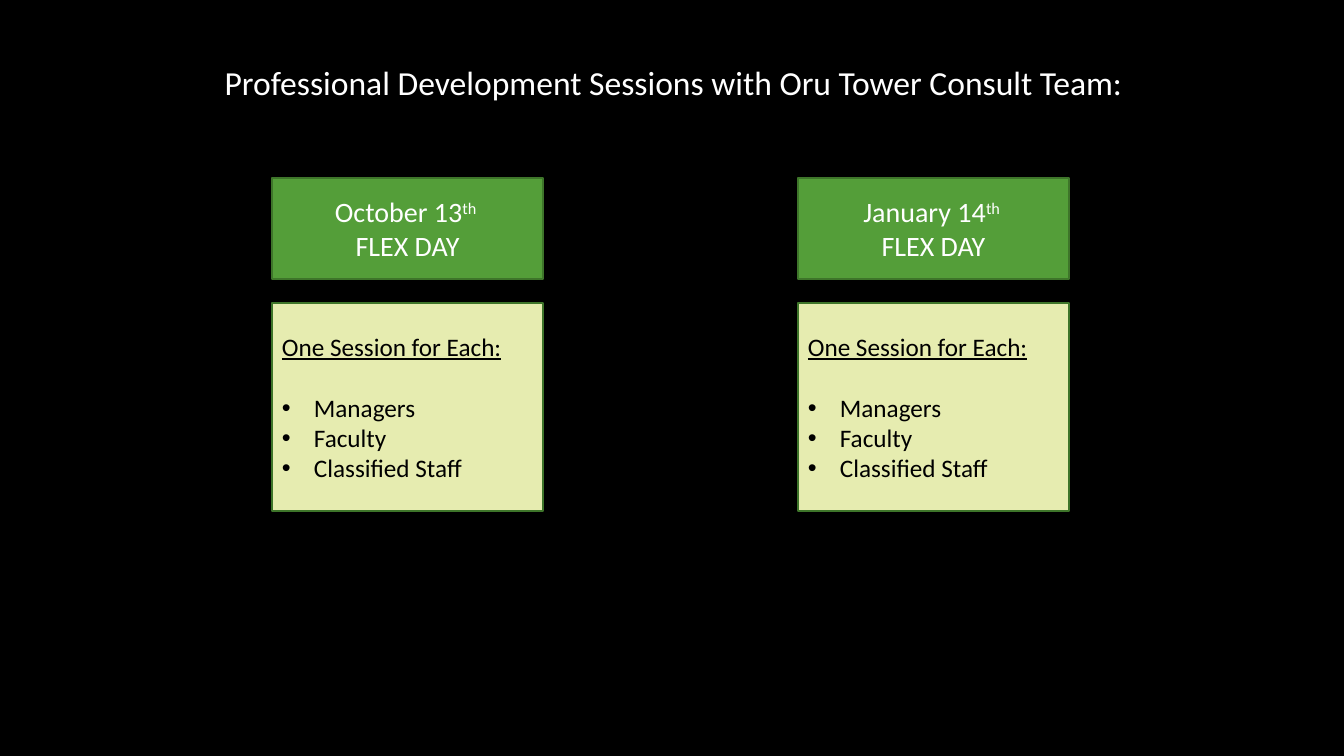
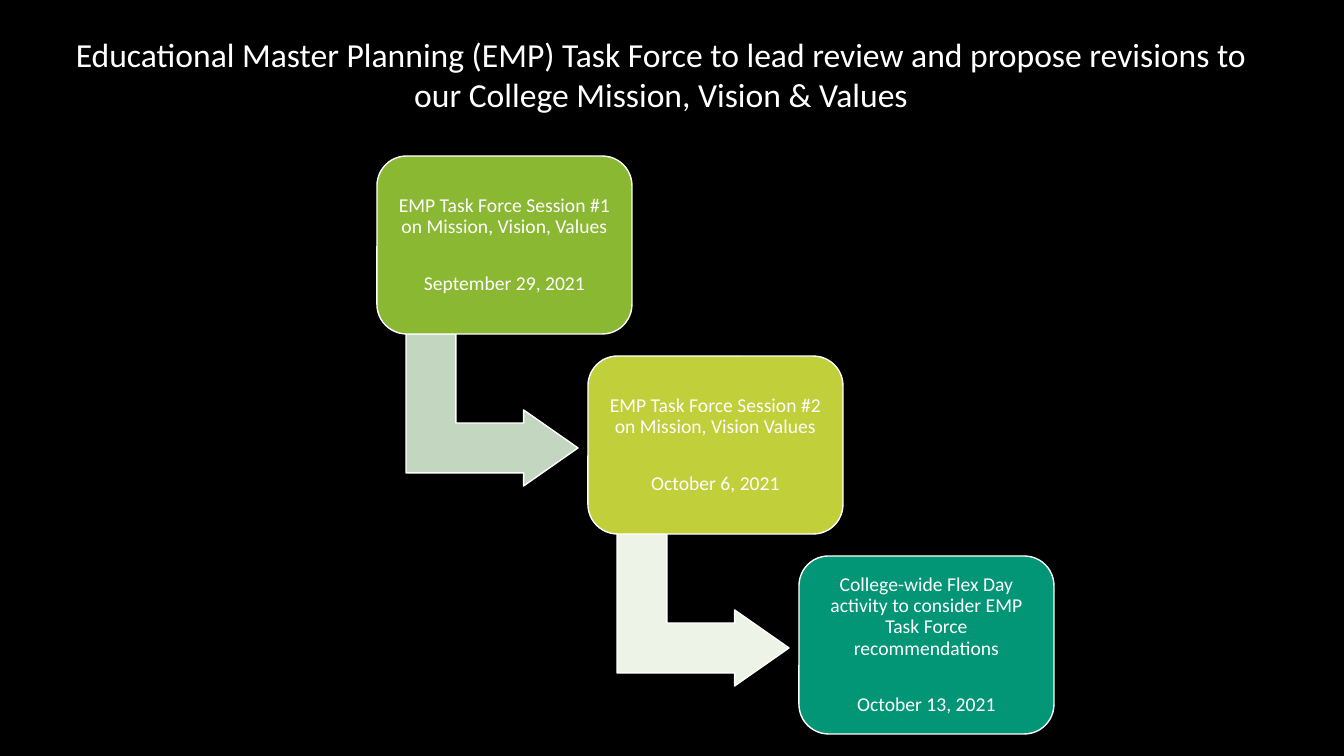
from dataclasses import dataclass

from lxml import etree
from pptx import Presentation
from pptx.dml.color import RGBColor
from pptx.enum.shapes import MSO_SHAPE
from pptx.enum.text import MSO_ANCHOR, MSO_AUTO_SIZE, PP_ALIGN
from pptx.oxml.ns import qn
from pptx.util import Pt

RECT, ROUND, BENT = MSO_SHAPE.RECTANGLE, MSO_SHAPE.ROUNDED_RECTANGLE, MSO_SHAPE.BENT_UP_ARROW
MIDDLE, NO_FIT = MSO_ANCHOR.MIDDLE, MSO_AUTO_SIZE.NONE
LEFT, CENTER = PP_ALIGN.LEFT, PP_ALIGN.CENTER
SCALE = 914400 / 100.8


@dataclass(frozen=True)
class Theme:
    font: str = "Calibri"
    back: str = "000000"
    white: str = "FFFFFF"
    black: str = "000000"
    green: str = "549E39"
    edge: str = "3E752A"
    pale: str = "E6ECB0"
    steps: tuple = ("8AB833", "C0CF3A", "029676")
    bends: tuple = ("C3D6BF", "EEF3E8")
    title: int = 24
    head: int = 20
    body: int = 18
    small: int = 14


THEME = Theme()


def px(n):
    return round(n * SCALE)


def rgb(code):
    return RGBColor.from_string(code)


def write(frame, text, size=THEME.body, color=THEME.white, align=CENTER,
          under=False, sup="", bullet=False, after=0, line=1.0):
    """Add one paragraph, with an optional raised ending."""
    para = frame.paragraphs[-1]
    if para.runs:
        para = frame.add_paragraph()
    para.alignment = align
    para.space_after = Pt(after)
    para.line_spacing = line
    if bullet:
        props = para._p.get_or_add_pPr()
        props.set("marL", str(px(32)))
        props.set("indent", str(-px(32)))
        etree.SubElement(props, qn("a:buFont")).set("typeface", "Arial")
        etree.SubElement(props, qn("a:buChar")).set("char", "•")
    for part in filter(None, (text, sup)):
        run = para.add_run()
        run.text = part
        font = run.font
        font.name, font.size, font.underline = THEME.font, Pt(size), under
        font.color.rgb = rgb(color)
        if part == sup:
            run._r.get_or_add_rPr().set("baseline", "30000")


def block(slide, kind, box, fill, edge):
    shape = slide.shapes.add_shape(kind, *map(px, box))
    shape.shadow.inherit = False
    shape.fill.solid()
    shape.fill.fore_color.rgb = rgb(fill)
    shape.line.color.rgb = rgb(edge)
    shape.line.width = Pt(1)
    frame = shape.text_frame
    frame.word_wrap = True
    frame.vertical_anchor = MIDDLE
    return shape


def start(prs, text, box):
    """Add a title-only slide and set its title."""
    slide = prs.slides.add_slide(prs.slide_layouts[5])
    title = slide.shapes.title
    title.left, title.top, title.width, title.height = map(px, box)
    frame = title.text_frame
    frame.auto_size = NO_FIT
    frame.word_wrap = True
    frame.vertical_anchor = MIDDLE
    write(frame, text, size=THEME.title)
    return slide


# Flex day column: date band above a list of groups
def column(slide, box, date, groups):
    x, y, w, h = box
    band, gap = 101, 24
    head = block(slide, RECT, (x, y, w, band), THEME.green, THEME.edge).text_frame
    write(head, date, size=THEME.head, sup="th ")
    write(head, "FLEX DAY", size=THEME.head)

    top = band + gap
    body = block(slide, RECT, (x, y + top, w, h - top), THEME.pale, THEME.edge).text_frame
    write(body, "One Session for Each:", color=THEME.black, align=LEFT, under=True, after=22)
    for group in groups:
        write(body, group, color=THEME.black, align=LEFT, bullet=True)


# Step card: topic with its date
def card(slide, box, fill, topic, date):
    shape = block(slide, ROUND, box, fill, THEME.white)
    shape.adjustments[0] = 0.167
    frame = shape.text_frame
    frame.margin_left = frame.margin_right = px(6)
    frame.margin_top = frame.margin_bottom = px(6)
    write(frame, topic, size=THEME.small, line=0.9, after=25)
    write(frame, date, size=THEME.small, line=0.9)


# Bent arrow: box is the area it covers after the quarter turn
def bend(slide, box, fill):
    x, y, w, h = box
    shift = (w - h) // 2
    shape = block(slide, BENT, (x + shift, y - shift, h, w), fill, THEME.white)
    shape.rotation = 90
    for i, value in enumerate((0.328, 0.25, 0.358)):
        shape.adjustments[i] = value


def flex(prs):
    slide = start(prs, "Professional Development Sessions with Oru Tower Consult Team:",
                  (210, 57, 927, 50))
    groups = ("Managers", "Faculty", "Classified Staff")
    for i, date in enumerate(("October 13", "January 14")):
        column(slide, (272 + 526 * i, 178, 271, 333), date, groups)


def plan(prs):
    slide = start(prs, "Educational Master Planning (EMP) Task Force to lead review and propose "
                  "revisions to our College Mission, Vision & Values", (64, 28, 1194, 92))
    steps = (
        ("EMP Task Force Session #1 on Mission, Vision, Values", "September 29, 2021"),
        ("EMP Task Force Session #2 on Mission, Vision Values", "October 6, 2021"),
        ("College-wide Flex Day activity to consider EMP Task Force recommendations",
         "October 13, 2021"),
    )
    w, h = 255, 178
    for i, (topic, date) in enumerate(steps):
        x, y = 377 + 211 * i, 156 + 200 * i
        if i < len(THEME.bends):
            bend(slide, (x + 29, y + h, 172, 152), THEME.bends[i])
        card(slide, (x, y, w, h), THEME.steps[i], topic, date)


def main():
    prs = Presentation()
    prs.slide_width, prs.slide_height = px(1344), px(756)
    back = prs.slide_master.background.fill
    back.solid()
    back.fore_color.rgb = rgb(THEME.back)
    flex(prs)
    plan(prs)
    prs.save("out.pptx")


if __name__ == "__main__":
    main()
